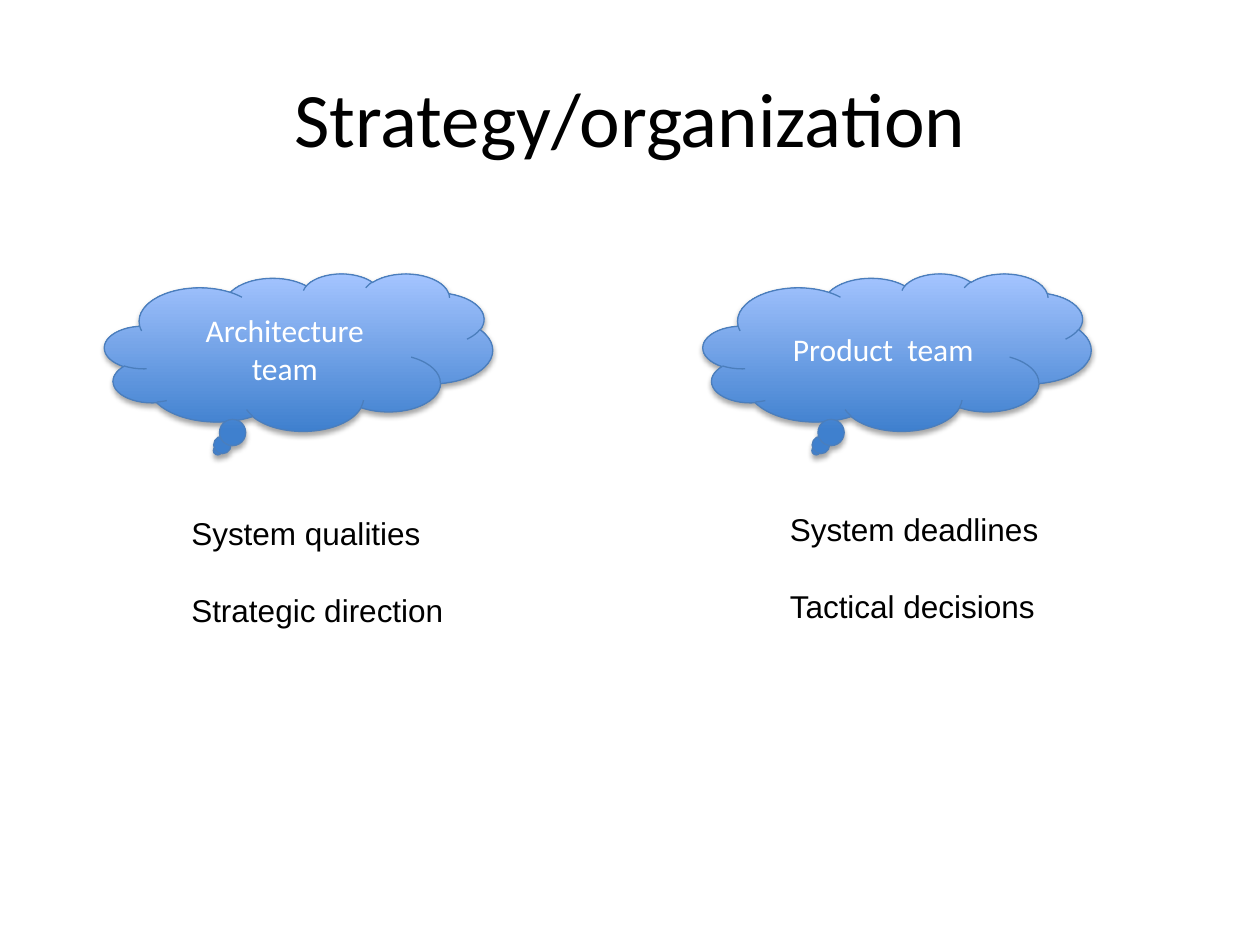
from lxml.etree import SubElement
from pptx import Presentation
from pptx.dml.color import RGBColor
from pptx.enum.shapes import MSO_SHAPE as Preset
from pptx.enum.text import MSO_ANCHOR as Anchor, MSO_AUTO_SIZE as AutoSize, PP_ALIGN as Align
from pptx.oxml.ns import qn
from pptx.util import Inches, Pt

BLACK = RGBColor(0x00, 0x00, 0x00)
WHITE = RGBColor(0xFF, 0xFF, 0xFF)
DEEP_BLUE = RGBColor(0x3F, 0x80, 0xCE)
PALE_BLUE = RGBColor(0xA4, 0xC4, 0xFF)
EDGE_BLUE = RGBColor(0x4B, 0x7E, 0xBC)

FIRST_COLUMN = 0.83
COLUMN_STEP = 4.75
CLOUD_TOP = 2.17
DUTY_INDENT = 0.59

TITLE_FORMAT = {"name": "Calibri", "size": Pt(44)}
TEAM_FORMAT = {"name": "Calibri", "size": Pt(18)}
DUTY_FORMAT = {"name": "Arial", "size": Pt(18)}

TEAMS = [
    ("Architecture team", 4.03, ["System qualities", "Strategic direction"]),
    ("Product  team", 4.0, ["System deadlines", "Tactical decisions"]),
]


def write(paragraph, wording, font_format, color, align):
    run = paragraph.add_run()
    run.text = wording
    paragraph.alignment = align
    for attribute, value in font_format.items():
        setattr(run.font, attribute, value)
    run.font.color.rgb = color


def add_heading(slide, wording):
    heading = slide.shapes.title
    heading.left, heading.top, heading.width, heading.height = map(Inches, (0.5, 0.3, 9, 1.25))
    heading.text_frame.vertical_anchor = Anchor.MIDDLE
    write(heading.text_frame.paragraphs[0], wording, TITLE_FORMAT, BLACK, Align.CENTER)


def cast_shadow(shape):
    shape.shadow.inherit = False
    effects = shape.element.spPr.find(qn("a:effectLst"))
    shadow = SubElement(effects, qn("a:outerShdw"), blurRad=str(Pt(3.1)), dist=str(Pt(1.8)),
                        dir="5400000", rotWithShape="0")
    tone = SubElement(shadow, qn("a:srgbClr"), val="000000")
    SubElement(tone, qn("a:alpha"), val="35000")


def add_team_cloud(slide, left, team):
    cloud = slide.shapes.add_shape(Preset.CLOUD_CALLOUT, Inches(left), Inches(CLOUD_TOP),
                                   Inches(3.08), Inches(1.25))
    cloud.fill.gradient()
    cloud.fill.gradient_angle = 90
    for stop, color in zip(cloud.fill.gradient_stops, (DEEP_BLUE, PALE_BLUE)):
        stop.color.rgb = color
    cloud.line.color.rgb = EDGE_BLUE
    cloud.line.width = Pt(0.75)
    cast_shadow(cloud)
    cloud.text_frame.vertical_anchor = Anchor.MIDDLE
    write(cloud.text_frame.paragraphs[0], team, TEAM_FORMAT, WHITE, Align.CENTER)


def add_duties(slide, left, top, duties):
    frame = slide.shapes.add_textbox(Inches(left), Inches(top), Inches(2.5), Inches(1.01)).text_frame
    frame.word_wrap = True
    frame.auto_size = AutoSize.SHAPE_TO_FIT_TEXT
    for index, duty in enumerate(duties):
        paragraph = frame.add_paragraph() if index else frame.paragraphs[0]
        if index:
            paragraph.space_before = Pt(22.5)
        write(paragraph, duty, DUTY_FORMAT, BLACK, Align.LEFT)


def main():
    deck = Presentation()
    deck.slide_width, deck.slide_height = Inches(10), Inches(7.5)
    slide = deck.slides.add_slide(deck.slide_layouts[5])
    add_heading(slide, "Strategy/organization")
    for column, (team, duties_top, duties) in enumerate(TEAMS):
        left = FIRST_COLUMN + column * COLUMN_STEP
        add_team_cloud(slide, left, team)
        add_duties(slide, left + DUTY_INDENT, duties_top, duties)
    deck.save("out.pptx")


if __name__ == "__main__":
    main()
